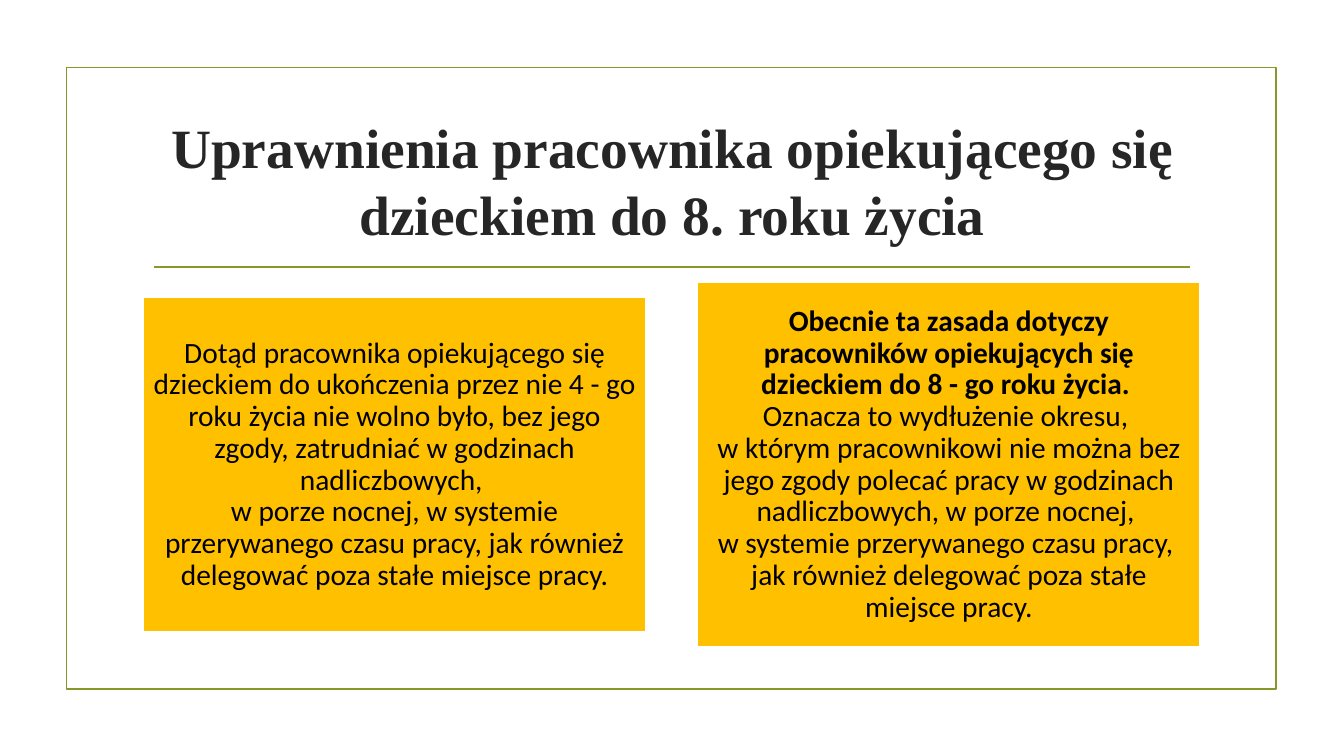
from lxml.etree import SubElement
from pptx import Presentation
from pptx.dml.color import RGBColor
from pptx.enum.shapes import MSO_CONNECTOR as Connector, MSO_SHAPE as Preset
from pptx.enum.text import MSO_ANCHOR as Anchor, PP_ALIGN as Align
from pptx.oxml.ns import qn
from pptx.util import Cm, Pt

COLORS = {"green": "83992A", "amber": "FFC000", "white": "FFFFFF",
          "heading": "262626", "body": "000000"}

HEADING = "Uprawnienia pracownika opiekującego się dzieckiem do 8. roku życia"
BEFORE = [
    (["Dotąd pracownika opiekującego się dzieckiem do ukończenia przez nie 4 - go "
      "roku życia nie wolno było, bez jego zgody, zatrudniać w godzinach nadliczbowych, ",
      "w porze nocnej, w systemie przerywanego czasu pracy, jak również delegować "
      "poza stałe miejsce pracy."], False),
]
NOW = [
    (["Obecnie ta zasada dotyczy pracowników opiekujących się dzieckiem "
      "do 8 - go roku życia. "], True),
    (["Oznacza to wydłużenie okresu, ",
      "w którym pracownikowi nie można bez jego zgody polecać pracy w godzinach "
      "nadliczbowych, w porze nocnej, ",
      "w systemie przerywanego czasu pracy, ",
      "jak również delegować poza stałe miejsce pracy."], False),
]


def color(name):
    return RGBColor.from_string(COLORS[name])


def outline(line, name):
    line.color.rgb = color(name)
    line.width = Pt(1.25)


def write(paragraph, text, font, size, ink, bold):
    run = paragraph.add_run()
    run.text = text
    run.font.name = font
    run.font.size = Pt(size)
    run.font.bold = bold
    run.font.color.rgb = color(ink)


def centre(frame):
    frame.word_wrap = True
    frame.vertical_anchor = Anchor.MIDDLE
    paragraph = frame.paragraphs[0]
    paragraph.alignment = Align.CENTER
    return paragraph


def draw_border(slide, left, top, width, height):
    border = slide.shapes.add_shape(
        Preset.RECTANGLE, Cm(left), Cm(top), Cm(width), Cm(height))
    border.shadow.inherit = False
    border.fill.background()
    outline(border.line, "green")


def draw_heading(slide, left, top, width, height):
    heading = slide.shapes.add_textbox(Cm(left), Cm(top), Cm(width), Cm(height))
    write(centre(heading.text_frame), HEADING, "Times New Roman", 39.6, "heading", True)
    rule_y = Cm(top + height + 0.38)
    rule = slide.shapes.add_connector(
        Connector.STRAIGHT, Cm(left + 0.28), rule_y, Cm(left + width - 0.28), rule_y)
    outline(rule.line, "green")
    SubElement(rule._element.spPr, qn("a:effectLst"))


def draw_card(slide, left, middle, width, height, passages):
    card = slide.shapes.add_shape(
        Preset.RECTANGLE, Cm(left), Cm(middle - height / 2), Cm(width), Cm(height))
    card.shadow.inherit = False
    card.fill.solid()
    card.fill.fore_color.rgb = color("amber")
    outline(card.line, "white")
    frame = card.text_frame
    frame.margin_left = frame.margin_right = Cm(0.23)
    frame.margin_top = frame.margin_bottom = Cm(0.23)
    paragraph = centre(frame)
    paragraph.line_spacing = 0.9
    lines = [(text, bold) for texts, bold in passages for text in texts]
    for index, (text, bold) in enumerate(lines):
        if index:
            paragraph.add_line_break()
        write(paragraph, text, "Calibri", 21, "body", bold)


def draw_comparison(slide, left, middle, width):
    card_width = 12.67
    draw_card(slide, left, middle, card_width, 8.43, BEFORE)
    draw_card(slide, left + width - card_width, middle, card_width, 9.19, NOW)


def main():
    deck = Presentation()
    deck.slide_width, deck.slide_height = Cm(33.87), Cm(19.05)
    slide = deck.slides.add_slide(deck.slide_layouts[6])
    draw_border(slide, 1.68, 1.7, 30.48, 15.67)
    draw_heading(slide, 3.61, 2.72, 26.67, 3.63)
    draw_comparison(slide, 3.61, 11.71, 26.64)
    deck.save("out.pptx")


if __name__ == "__main__":
    main()
